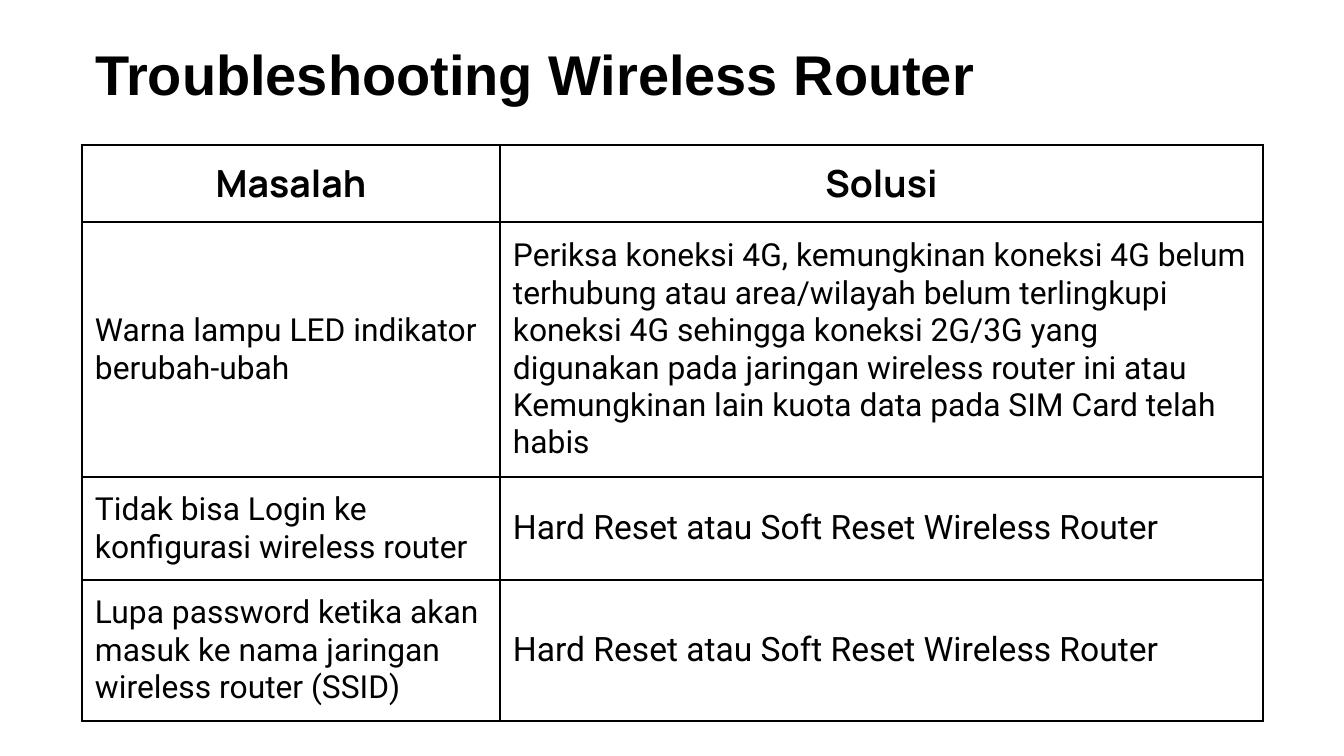
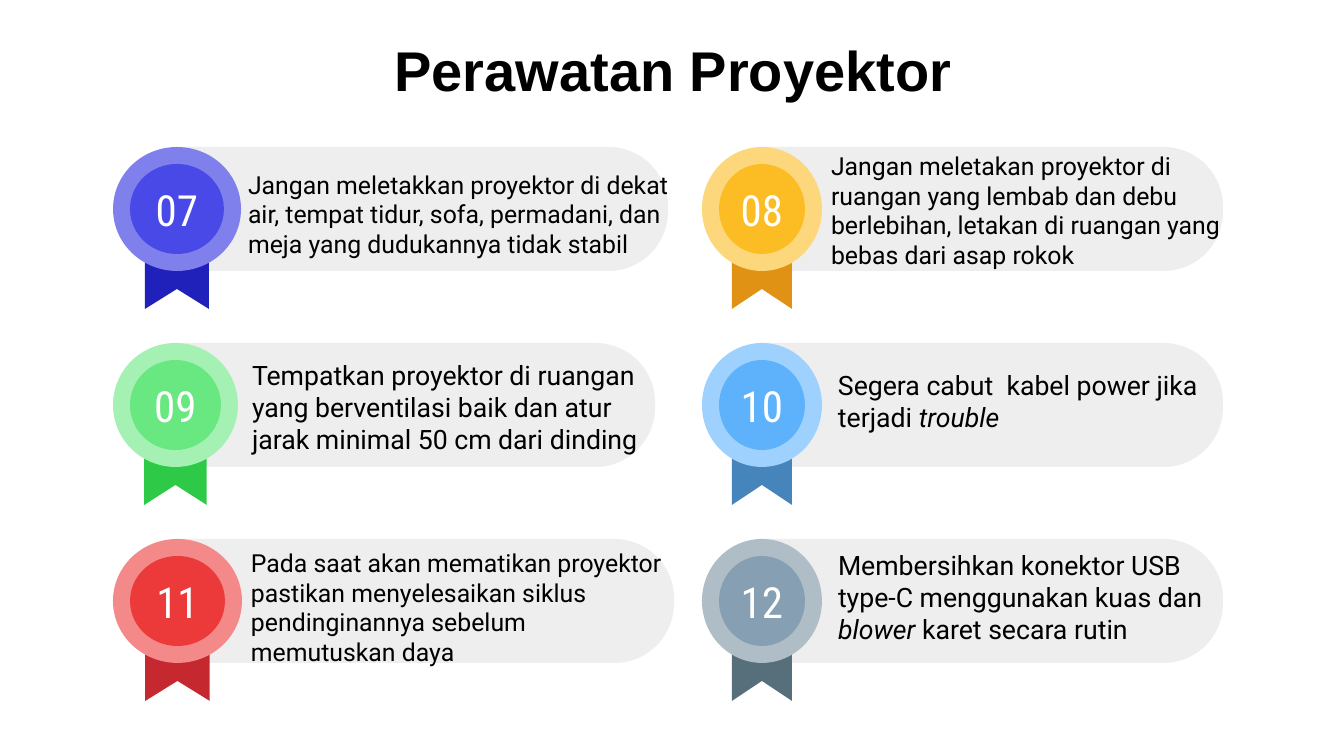
import pptx
import pptx.util
import pptx.dml.color
import pptx.enum.shapes
import pptx.enum.text
import pptx.oxml
import pptx.oxml.ns
from dataclasses import dataclass

SHAPE = pptx.enum.shapes.MSO_SHAPE
ANCHOR = pptx.enum.text.MSO_ANCHOR
ALIGN = pptx.enum.text.PP_ALIGN
PX = 914400 / 134.4  # EMU in one px


@dataclass(frozen=True)
class Theme:
    ink: str = "000000"
    paper: str = "FFFFFF"
    pill: str = "EEEEEE"
    title_font: str = "Arial"
    head_font: str = "Manrope"
    body_font: str = "Roboto"
    number_font: str = "Roboto Condensed"
    title_size: float = 30
    head_size: float = 20
    cell_size: float = 17
    answer_size: float = 18
    number_size: float = 23
    tip_size: float = 14.3
    small_tip_size: float = 13.3
    border: float = 1.5


theme = Theme()


def px(*lengths):
    return [pptx.util.Emu(round(length * PX)) for length in lengths]


def style_text(frame, font, size, color, bold=False, align=ALIGN.LEFT,
               anchor=ANCHOR.MIDDLE, inset=(13, 13)):
    """Format a whole text frame and all of its runs."""
    frame.word_wrap = True
    frame.auto_size = pptx.enum.text.MSO_AUTO_SIZE.NONE
    frame.vertical_anchor = anchor
    side, end = px(*inset)
    frame.margin_left = frame.margin_right = side
    frame.margin_top = frame.margin_bottom = end
    for para in frame.paragraphs:
        para.alignment = align
        for span in para.runs:
            span.font.name = font
            span.font.size = pptx.util.Pt(size)
            span.font.bold = bold
            span.font.color.rgb = pptx.dml.color.RGBColor.from_string(color)


deck = pptx.Presentation()
deck.slide_width, deck.slide_height = px(1344, 756)

# Pages and their titles
pages = []
for title, place, align, anchor, inset, spacing in [
    ("Troubleshooting Wireless Router", (82, 35, 1115, 77),
     ALIGN.LEFT, ANCHOR.MIDDLE, (13, 13), 1.0),
    ("Perawatan Proyektor", (69, 32, 1208, 77),
     ALIGN.CENTER, ANCHOR.BOTTOM, (10, 5), 0.9),
]:
    page = deck.slides.add_slide(deck.slide_layouts[5])
    heading = page.shapes.title
    heading.left, heading.top, heading.width, heading.height = px(*place)
    heading.text_frame.text = title
    style_text(heading.text_frame, theme.title_font, theme.title_size, theme.ink,
               True, align, anchor, inset)
    heading.text_frame.paragraphs[0].line_spacing = spacing
    pages.append(page)
trouble_page, care_page = pages

# Table of problems and solutions
reset = "Hard Reset atau Soft Reset Wireless Router"
rows = [
    ("Masalah", "Solusi"),
    ("Warna lampu LED indikator berubah-ubah",
     "Periksa koneksi 4G, kemungkinan koneksi 4G belum terhubung atau "
     "area/wilayah belum terlingkupi koneksi 4G sehingga koneksi 2G/3G yang "
     "digunakan pada jaringan wireless router ini atau Kemungkinan lain kuota "
     "data pada SIM Card telah habis"),
    ("Tidak bisa Login ke konfigurasi wireless router", reset),
    ("Lupa password ketika akan masuk ke nama jaringan wireless router (SSID)", reset),
]
column_widths = (418, 763)
row_heights = (69, 255, 103, 141)
table = trouble_page.shapes.add_table(
    len(rows), 2, *px(82, 145, sum(column_widths), sum(row_heights))).table
table.first_row = table.horz_banding = False
for column, width in zip(table.columns, px(*column_widths)):
    column.width = width
for row, height in zip(table.rows, px(*row_heights)):
    row.height = height

for row_index, texts in enumerate(rows):
    for column_index, text in enumerate(texts):
        cell = table.cell(row_index, column_index)
        cell.text_frame.text = text
        if row_index == 0:
            look = (theme.head_font, theme.head_size, theme.ink, True, ALIGN.CENTER)
        else:
            size = theme.answer_size if text == reset else theme.cell_size
            look = (theme.body_font, size, theme.ink)
        style_text(cell.text_frame, *look)
        cell.vertical_anchor = ANCHOR.MIDDLE
        cell.margin_left, cell.margin_top, cell.margin_right, cell.margin_bottom = px(*[13] * 4)
        for edge in ("lnL", "lnR", "lnT", "lnB"):
            cell._tc.get_or_add_tcPr().append(pptx.oxml.parse_xml(
                f'<a:{edge} {pptx.oxml.ns.nsdecls("a")} w="{pptx.util.Pt(theme.border)}">'
                f'<a:solidFill><a:srgbClr val="{theme.ink}"/></a:solidFill></a:{edge}>'))
        cell.fill.background()

# Numbered medals: text between asterisks is italic
# number, ribbon, ring, disc, medal width, pill right, text left, width, middle, size, tip
medals = [
    ("07", "2020BA", "8080ED", "4949E7", 128, 668, 235, 468, 214, theme.small_tip_size,
     "Jangan meletakkan proyektor di dekat air, tempat tidur, sofa, permadani, "
     "dan meja yang dudukannya tidak stabil"),
    ("08", "E09214", "FDD77C", "FCBD24", 120, 1223, 818, 426, 210, theme.small_tip_size,
     "Jangan meletakan proyektor di ruangan yang lembab dan debu berlebihan, "
     "letakan di ruangan yang bebas dari asap rokok"),
    ("09", "2FC948", "A5F1B3", "69E781", 125, 655, 239, 417, 407, theme.tip_size,
     "Tempatkan proyektor di ruangan yang berventilasi baik dan atur jarak "
     "minimal 50 cm dari dinding"),
    ("10", "4685BC", "9ED1FD", "5EB2FC", 120, 1223, 825, 394, 401, theme.tip_size,
     "Segera cabut  kabel power jika terjadi *trouble*"),
    ("11", "C6282F", "F48989", "EC3A3B", 129, 674, 238, 465, 607, theme.small_tip_size,
     "Pada saat akan mematikan proyektor pastikan menyelesaikan siklus "
     "pendinginannya sebelum\nmemutuskan daya"),
    ("12", "576F7A", "AFBDC6", "869FB2", 120, 1223, 825, 391, 597, theme.tip_size,
     "Membersihkan konektor USB type-C menggunakan kuas dan *blower* karet secara rutin"),
]
column_lefts = (113, 702)
first_top, row_pitch, medal_height, rim = 147, 196, 124, 17

for index, (number, ribbon_color, ring_color, disc_color, medal_width, pill_right,
            tip_left, tip_width, tip_middle, tip_size, tip) in enumerate(medals):
    left = column_lefts[index % 2]
    top = first_top + index // 2 * row_pitch
    center = left + medal_width / 2

    # Pill: a shape with two round corners, turned so that they face right
    pill_left = center - 4
    pill_width = pill_right - pill_left
    pill = care_page.shapes.add_shape(SHAPE.ROUND_2_SAME_RECTANGLE, *px(
        pill_left + (pill_width - medal_height) / 2,
        top + (medal_height - pill_width) / 2, medal_height, pill_width))
    pill.rotation = 90
    pill.adjustments[0] = 0.48

    # Ribbon with a notch
    half = medal_width / 4
    ribbon_top = top + 104
    outline = care_page.shapes.build_freeform(*px(center - half, ribbon_top), scale=1.0)
    outline.add_line_segments([px(*point) for point in (
        (center - half, ribbon_top + 58), (center, ribbon_top + 38),
        (center + half, ribbon_top + 58), (center + half, ribbon_top))], close=True)
    ribbon = outline.convert_to_shape()

    # Ring and disc
    ring = care_page.shapes.add_shape(SHAPE.OVAL, *px(left, top, medal_width, medal_height))
    disc = care_page.shapes.add_shape(SHAPE.OVAL, *px(
        left + rim, top + rim, medal_width - 2 * rim, medal_height - 2 * rim))
    disc.text_frame.text = number
    style_text(disc.text_frame, theme.number_font, theme.number_size, theme.paper,
               align=ALIGN.CENTER, inset=(0, 0))

    for shape, color in ((pill, theme.pill), (ribbon, ribbon_color),
                         (ring, ring_color), (disc, disc_color)):
        shape.shadow.inherit = False
        shape.fill.solid()
        shape.fill.fore_color.rgb = pptx.dml.color.RGBColor.from_string(color)
        shape.line.fill.background()

    # Tip
    box = care_page.shapes.add_textbox(*px(
        tip_left, tip_middle - medal_height / 2, tip_width, medal_height))
    for line_index, line in enumerate(tip.split("\n")):
        para = box.text_frame.add_paragraph() if line_index else box.text_frame.paragraphs[0]
        for part_index, part in enumerate(line.split("*")):
            if part:
                span = para.add_run()
                span.text = part
                span.font.italic = part_index % 2 == 1
    style_text(box.text_frame, theme.body_font, tip_size, theme.ink)

deck.save("out.pptx")
